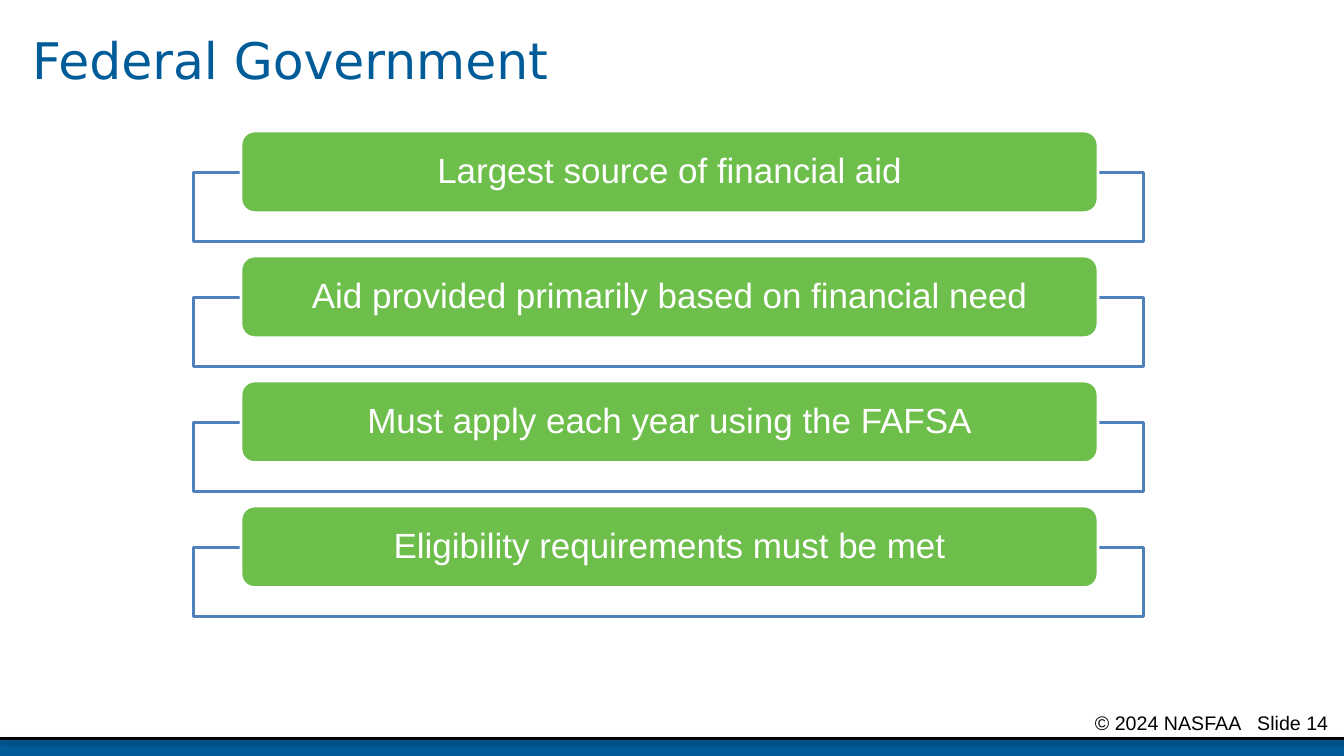
from lxml import etree
from pptx import Presentation
from pptx.dml.color import RGBColor
from pptx.enum.shapes import MSO_CONNECTOR, MSO_SHAPE
from pptx.enum.text import MSO_ANCHOR as Anchor, PP_ALIGN as Align
from pptx.oxml import parse_xml
from pptx.oxml.ns import nsdecls, qn
from pptx.util import Inches, Pt

BLUE = RGBColor(0x00, 0x5B, 0x99)
GREEN = RGBColor(0x6D, 0xBE, 0x4B)
OUTLINE = RGBColor(0x4F, 0x81, 0xBD)
WHITE = RGBColor(0xFF, 0xFF, 0xFF)
BLACK = RGBColor(0x00, 0x00, 0x00)

TITLE_FONT = {"name": "DejaVu Sans", "size": Pt(36)}
POINT_FONT = {"name": "Arial", "size": Pt(25)}
FOOTER_FONT = {"name": "Arial", "size": Pt(14)}

SLIDE_WIDTH, SLIDE_HEIGHT = 13.33, 7.5
POINTS = [
    "Largest source of financial aid",
    "Aid provided primarily based on financial need",
    "Must apply each year using the FAFSA",
    "Eligibility requirements must be met",
]
LINE_SHADOW = (
    f'<a:effectLst {nsdecls("a")}><a:outerShdw blurRad="{Pt(3.1)}" dist="{Pt(1.6)}" '
    'dir="5400000" rotWithShape="0"><a:srgbClr val="000000"><a:alpha val="38000"/>'
    '</a:srgbClr></a:outerShdw></a:effectLst>'
)


def write_text(shape, text, font, color, align=Align.LEFT, spacing=None):
    frame = shape.text_frame
    frame.word_wrap = True
    para = frame.paragraphs[0]
    para.alignment = align
    para.line_spacing = spacing
    span = para.add_run()
    span.text = text
    for key, value in font.items():
        setattr(span.font, key, value)
    span.font.color.rgb = color
    return para


def add_block(slide, kind, left, top, width, height, fill, line=None):
    block = slide.shapes.add_shape(
        kind, Inches(left), Inches(top), Inches(width), Inches(height))
    block.shadow.inherit = False
    block.fill.solid()
    block.fill.fore_color.rgb = fill
    if line is None:
        block.line.fill.background()
    else:
        block.line.color.rgb = line
        block.line.width = Pt(2)
    return block


def add_title(slide, left, top, width, height):
    box = slide.shapes.add_textbox(
        Inches(left), Inches(top), Inches(width), Inches(height))
    box.text_frame.vertical_anchor = Anchor.MIDDLE
    write_text(box, "Federal Government", TITLE_FONT, BLUE, spacing=0.9)


def add_point(slide, text, left, top, width):
    frame = add_block(slide, MSO_SHAPE.RECTANGLE, left, top + 0.41, width, 0.69,
                      WHITE, OUTLINE)
    color = frame.fill._xPr.find(qn("a:solidFill"))[0]
    etree.SubElement(color, qn("a:alpha"), val="90000")
    label = add_block(slide, MSO_SHAPE.ROUNDED_RECTANGLE, left + 0.47, top, 8.5, 0.81,
                      GREEN, WHITE)
    insets = {"margin_left": 0.29, "margin_right": 0.29,
              "margin_top": 0, "margin_bottom": 0}
    for key, value in insets.items():
        setattr(label.text_frame, key, Inches(value))
    label.text_frame.vertical_anchor = Anchor.MIDDLE
    write_text(label, text, POINT_FONT, WHITE, Align.CENTER, 0.9)


def add_points(slide, left, top, width, pitch):
    for index, text in enumerate(POINTS):
        add_point(slide, text, left, top + index * pitch, width)


def add_footer(slide, top):
    add_block(slide, MSO_SHAPE.RECTANGLE, 0, top, SLIDE_WIDTH, 0.2, BLUE)
    rule = slide.shapes.add_connector(
        MSO_CONNECTOR.STRAIGHT, 0, Inches(top), Inches(SLIDE_WIDTH), Inches(top))
    rule.line.color.rgb = BLACK
    rule.line.width = Pt(2)
    rule._element.spPr.append(parse_xml(LINE_SHADOW))

    box = slide.shapes.add_textbox(
        Inches(SLIDE_WIDTH - 5), Inches(top - 0.33), Inches(5), Inches(0.25))
    box.text_frame.margin_left = Inches(2.53)
    box.text_frame.margin_right = 0
    para = write_text(box, "© 2024 NASFAA\tSlide 14", FOOTER_FONT, BLACK)
    stops = etree.SubElement(para._p.get_or_add_pPr(), qn("a:tabLst"))
    etree.SubElement(stops, qn("a:tab"), pos=str(Inches(1.61)), algn="l")


def main():
    deck = Presentation()
    deck.slide_width = Inches(SLIDE_WIDTH)
    deck.slide_height = Inches(SLIDE_HEIGHT)
    page = deck.slides.add_slide(deck.slide_layouts[6])
    add_footer(page, 7.33)
    add_title(page, 0.22, 0, 12.89, 1.25)
    add_points(page, 1.92, 1.3, 9.42, 1.24)
    deck.save("out.pptx")


if __name__ == "__main__":
    main()
